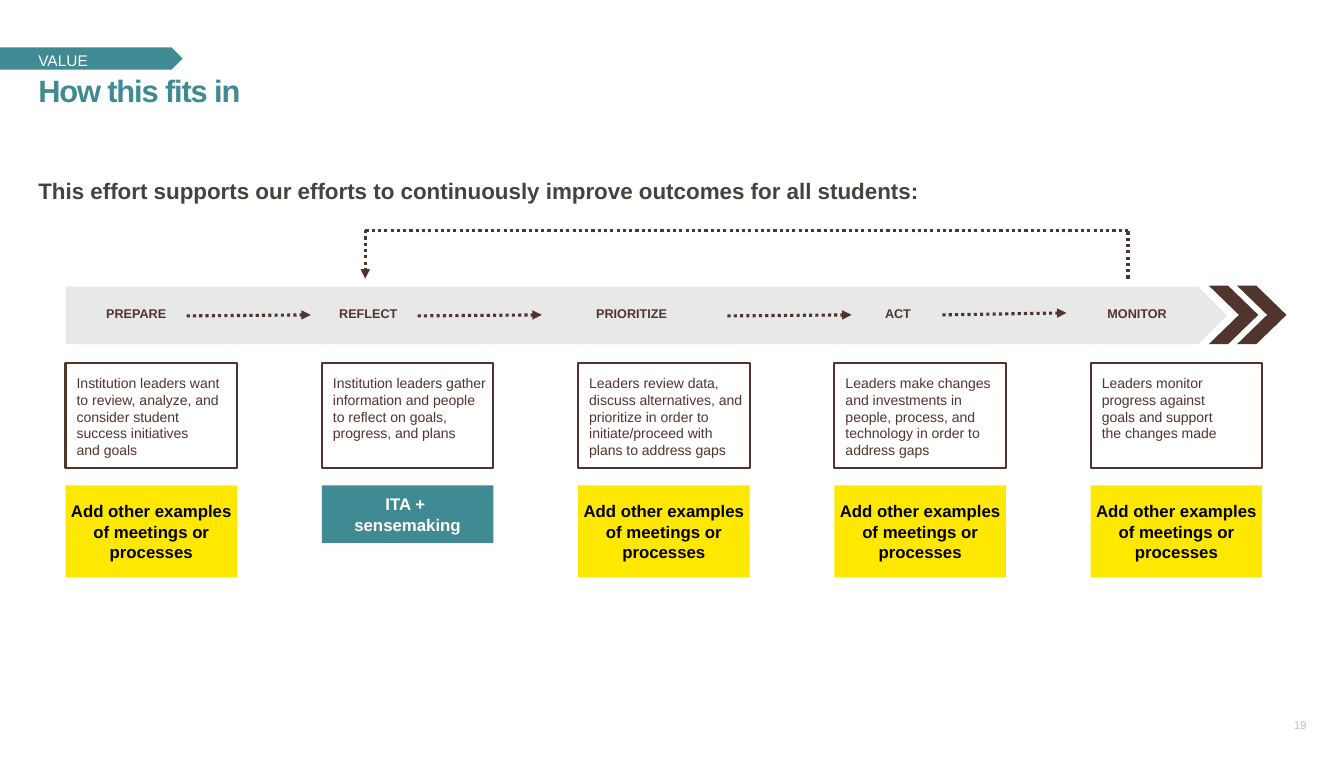
from pptx import Presentation
from pptx.dml.color import RGBColor
from pptx.enum.dml import MSO_LINE
from pptx.enum.shapes import MSO_CONNECTOR, MSO_SHAPE
from pptx.enum.text import MSO_ANCHOR as ANCHOR, PP_ALIGN as ALIGN
from pptx.oxml.ns import qn
from pptx.util import Inches, Pt
from lxml.etree import SubElement

TEAL = RGBColor(0x40, 0x8A, 0x93)
BROWN = RGBColor(0x50, 0x34, 0x2D)
OUTLINE = RGBColor(0x51, 0x34, 0x2C)
SLATE = RGBColor(0x41, 0x45, 0x3B)
GRAY = RGBColor(0xBF, 0xBF, 0xBF)
YELLOW = RGBColor(0xFF, 0xE8, 0x00)
WHITE = RGBColor(0xFF, 0xFF, 0xFF)
BLACK = RGBColor(0x00, 0x00, 0x00)

# Content
SECTION = "VALUE"
TITLE = "How this fits in"
LEAD = "This effort supports our efforts to continuously improve outcomes for all students:"
PAGE = "19"
EXAMPLES = "Add other examples of meetings or processes"
# Stage name, centre of the name, description, activity
STAGES = [
    ("PREPARE", 1.35,
     "Institution leaders want to review, analyze, and consider student success initiatives \nand goals",
     EXAMPLES),
    ("REFLECT", 3.65,
     "Institution leaders gather information and people \nto reflect on goals, \nprogress, and plans",
     "ITA + \nsensemaking"),
    ("PRIORITIZE", 6.26,
     "Leaders review data, discuss alternatives, and prioritize in order to "
     "initiate/proceed with plans to address gaps",
     EXAMPLES),
    ("ACT", 8.9,
     "Leaders make changes and investments in people, process, and technology in order to address gaps",
     EXAMPLES),
    ("MONITOR", 11.27,
     "Leaders monitor progress against \ngoals and support \nthe changes made",
     EXAMPLES),
]
# Start of each arrow between stages: x, y, rise
STAGE_ARROWS = [(1.85, 3.13, 0.01), (4.14, 3.13, 0.01), (7.21, 3.13, 0.01), (9.34, 3.12, 0.02)]
ARROW_LENGTH = 1.23
LOOP = [(11.18, 2.76), (11.18, 2.28), (3.62, 2.28), (3.62, 2.76)]

# Layout
LEFT, PITCH, COLUMN_W = 0.65, 2.54, 1.7
MARGIN = 0.38
LABEL_W, LABEL_H = 1.03, 0.14

prs = Presentation()
prs.slide_width, prs.slide_height = Inches(13.32), Inches(7.5)
slide = prs.slides.add_slide(prs.slide_layouts[5])


def write(shape, text, size, color, bold=False, align=ALIGN.LEFT, anchor=ANCHOR.TOP,
          insets=(0, 0, 0, 0), wrap=True, spacing=None):
    frame = shape.text_frame
    frame.word_wrap, frame.vertical_anchor = wrap, anchor
    frame.margin_left, frame.margin_top, frame.margin_right, frame.margin_bottom = map(Inches, insets)
    paragraph = frame.paragraphs[0]
    paragraph.alignment, paragraph.line_spacing = align, spacing
    for i, line in enumerate(text.split("\n")):
        if i:
            paragraph.add_line_break()
        run = paragraph.add_run()
        run.text = line
        run.font.name, run.font.size, run.font.bold = "Arial", Pt(size), bold
        run.font.color.rgb = color
    return run


def add_box(left, top, width, height):
    return slide.shapes.add_textbox(*map(Inches, (left, top, width, height)))


def add_block(kind, left, top, width, height, fill, line=None):
    block = slide.shapes.add_shape(kind, *map(Inches, (left, top, width, height)))
    block.shadow.inherit = False
    block.fill.solid()
    block.fill.fore_color.rgb = fill
    if line is None:
        block.line.fill.background()
    else:
        block.line.color.rgb, block.line.width = line, Pt(1.5)
    return block


def add_dotted(start, end, arrow=False):
    dotted = slide.shapes.add_connector(MSO_CONNECTOR.STRAIGHT, *map(Inches, start + end))
    dotted.line.color.rgb, dotted.line.width = BROWN, Pt(2.25)
    dotted.line.dash_style = MSO_LINE.ROUND_DOT
    if arrow:
        SubElement(dotted.line._get_or_add_ln(), qn("a:tailEnd"), type="triangle")
    SubElement(dotted._element.spPr, qn("a:effectLst"))


# Section tag, title, lead sentence and page number
section_tag = add_block(MSO_SHAPE.PENTAGON, 0, 0.47, 1.81, 0.22, TEAL)
write(section_tag, SECTION, 11, WHITE, anchor=ANCHOR.BOTTOM, insets=(MARGIN, 0, 0, 0))

title = slide.shapes.title
title.left, title.top, title.width, title.height = map(Inches, (MARGIN, 0.71, 12.56, 0.31))
title_run = write(title, TITLE, 22, TEAL, bold=True)
title_run.font._element.set("spc", "-80")

write(add_box(MARGIN, 1.76, 8.79, 0.36), LEAD, 16, SLATE, bold=True)
write(add_box(12.81, 7.11, 0.14, 0.14), PAGE, 8, GRAY,
      align=ALIGN.RIGHT, anchor=ANCHOR.MIDDLE, wrap=False)

# Stage banner with its closing chevrons
banner = add_block(MSO_SHAPE.PENTAGON, LEFT, 2.84, 11.51, 0.57, GRAY)
banner_color = banner._element.spPr.find(qn("a:solidFill"))[0]
SubElement(banner_color, qn("a:alpha"), val="35000")
for chevron_left in (11.98, 12.26):
    chevron = add_block(MSO_SHAPE.CHEVRON, chevron_left, 2.83, 0.49, 0.58, BROWN)
    chevron.adjustments[0] = 0.61

# Arrows between stages and the loop back from MONITOR to REFLECT
for x, y, rise in STAGE_ARROWS:
    add_dotted((x, y), (x + ARROW_LENGTH, y - rise), arrow=True)
for start, end in zip(LOOP, LOOP[1:]):
    add_dotted(start, end, arrow=end == LOOP[-1])

# One column per stage: name, description, activity
for i, (name, center, description, activity) in enumerate(STAGES):
    left = LEFT + i * PITCH
    write(add_box(center - LABEL_W / 2, 3.05, LABEL_W, LABEL_H), name, 9, BROWN, bold=True,
          align=ALIGN.CENTER, anchor=ANCHOR.MIDDLE, spacing=0.9)

    card = add_block(MSO_SHAPE.RECTANGLE, left, 3.6, COLUMN_W, 1.04, WHITE, OUTLINE)
    write(card, description, 10, BROWN, insets=(0.11, 0.11, 0.06, 0.05))

    if activity == EXAMPLES:
        height, fill, color = 0.91, YELLOW, BLACK
    else:
        height, fill, color = 0.57, TEAL, WHITE
    activity_block = add_block(MSO_SHAPE.RECTANGLE, left, 4.81, COLUMN_W, height, fill)
    write(activity_block, activity, 12, color, bold=True, align=ALIGN.CENTER, anchor=ANCHOR.MIDDLE)

prs.save("out.pptx")
